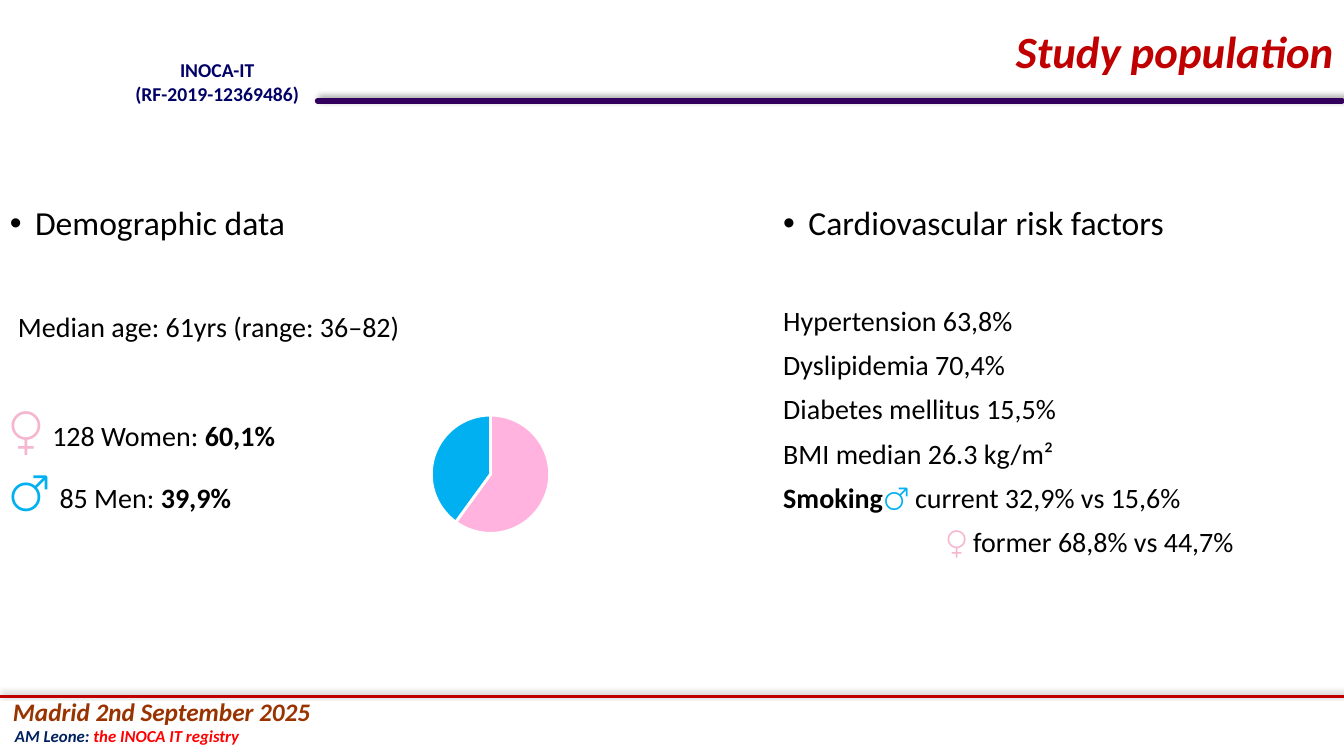
"""Build the study population slide with demographics, sex split and risk factors."""
from dataclasses import dataclass
from typing import Optional

from lxml.etree import SubElement
from pptx import Presentation
from pptx.chart.data import CategoryChartData
from pptx.dml.color import RGBColor
from pptx.enum.chart import XL_CHART_TYPE as ChartType
from pptx.enum.shapes import MSO_CONNECTOR as Connector
from pptx.enum.text import MSO_ANCHOR as Anchor, MSO_AUTO_SIZE as AutoSize, PP_ALIGN as Align
from pptx.oxml import parse_xml
from pptx.oxml.ns import nsdecls, qn
from pptx.util import Inches, Pt

FONT = "Calibri"
COLORS = {
    "black": "000000", "white": "FFFFFF", "red": "C00000", "bright_red": "FF0000",
    "brown": "993300", "navy": "002060", "indigo": "000066", "violet": "32005C",
    "rose": "F5B7D0", "pink": "FFB3DE", "blue": "00B0F0",
}


@dataclass(frozen=True)
class Run:
    """A piece of text with one format."""
    text: str
    size: float = 20
    color: str = "black"
    bold: bool = False
    italic: bool = False


@dataclass(frozen=True)
class Line:
    """A paragraph with its spacing, indent and bullet."""
    runs: tuple[Run, ...]
    before: float = 10
    spacing: float = 0.9
    align: Align = Align.LEFT
    indent: float = 0
    bullet: bool = False
    tab: Optional[float] = None


@dataclass(frozen=True)
class Block:
    """A text box with its place and paragraphs."""
    left: float
    top: float
    width: float
    height: float
    lines: tuple[Line, ...]


@dataclass(frozen=True)
class Rule:
    """A horizontal line with a shadow."""
    left: float
    top: float
    right: float
    color: str
    weight: float


def heading(text: str) -> Line:
    """Return a bulleted column heading."""
    return Line((Run(text, 24),), before=0, indent=0.25, bullet=True)


def sex_share(symbol: str, color: str, label: str, share: str) -> tuple[Run, ...]:
    """Return the runs of one sex with its share in bold."""
    return Run(f"{symbol} ", 32, color, True), Run(f"{label}: "), Run(share, bold=True)


def smoking(symbol: str, color: str, text: str) -> tuple[Run, ...]:
    """Return the runs of one smoking comparison."""
    return Run(f"{symbol} ", color=color, bold=True), Run(text)


BLOCKS = (
    Block(0.03, 6.86, 11.91, 0.4, (
        Line((Run("Madrid 2nd September 2025", 18, "brown", True, True),), 0, 1),)),
    Block(0.05, 7.15, 11.91, 0.3, (
        Line((Run("AM Leone:", 12, "navy", True, True),
              Run(" the INOCA IT registry", 12, "bright_red", True, True)), 0, 1),)),
    Block(0.96, 0.53, 2.39, 0.81, tuple(
        Line((Run(text, 14, "indigo", True),), 0, 1, Align.CENTER)
        for text in ("INOCA-IT", "(RF-2019-12369486)"))),
    Block(0, 2, 5.67, 4.76, (
        heading("Demographic data"),
        Line((Run("Median age: 61yrs (range: 36–82)"),), before=50, indent=0.08),
        Line(sex_share("♀️", "rose", "128 Women", "60,1%"), before=46),
        Line(sex_share("♂", "blue", "85 Men", "39,9%")))),
    Block(7.67, 2, 5.67, 4.76, (
        heading("Cardiovascular risk factors"),
        Line((Run("Hypertension 63,8%"),), before=46),
        *(Line((Run(text),)) for text in (
            "Dyslipidemia 70,4%", "Diabetes mellitus 15,5%", "BMI median 26.3 kg/m²")),
        Line((Run("Smoking\t", bold=True),
              *smoking("♂", "blue", "current 32,9% vs 15,6%")), tab=1.56),
        Line(smoking("♀️", "rose", "former 68,8% vs 44,7%"), indent=1.62))),
)
RULES = (Rule(3.15, 1, 13.31, "violet", 4), Rule(0, 6.91, 13.33, "red", 2))
TITLE = Line((Run("Study population", 32, "red", True, True),), 0, align=Align.RIGHT)


def rgb(name: str) -> RGBColor:
    """Return a named colour."""
    return RGBColor.from_string(COLORS[name])


def set_all(target, values: dict) -> None:
    """Set attributes from a dict of format values."""
    for name, value in values.items():
        setattr(target, name, value)


def write_lines(frame, lines: tuple[Line, ...]) -> None:
    """Write paragraphs into a text frame."""
    set_all(frame, {"word_wrap": True, "auto_size": AutoSize.NONE})
    for index, line in enumerate(lines):
        paragraph = frame.add_paragraph() if index else frame.paragraphs[0]
        properties = paragraph._p.get_or_add_pPr()
        properties.set("marL", str(Inches(line.indent)))
        properties.set("indent", str(Inches(-line.indent if line.bullet else 0)))
        if line.bullet:
            SubElement(properties, qn("a:buFont"), typeface="Arial")
            SubElement(properties, qn("a:buChar"), char="•")
        if line.tab is not None:
            tabs = SubElement(properties, qn("a:tabLst"))
            SubElement(tabs, qn("a:tab"), pos=str(Inches(line.tab)), algn="l")
        set_all(paragraph, {"alignment": line.align, "line_spacing": line.spacing,
                            "space_before": Pt(line.before)})
        for part in line.runs:
            run = paragraph.add_run()
            run.text = part.text
            set_all(run.font, {"name": FONT, "size": Pt(part.size),
                               "bold": part.bold, "italic": part.italic})
            run.font.color.rgb = rgb(part.color)


def add_block(slide, block: Block) -> None:
    """Add a text box."""
    shape = slide.shapes.add_textbox(*map(Inches, (
        block.left, block.top, block.width, block.height)))
    write_lines(shape.text_frame, block.lines)


def add_rule(slide, rule: Rule) -> None:
    """Add a horizontal line with a soft shadow."""
    connector = slide.shapes.add_connector(Connector.STRAIGHT, *map(Inches, (
        rule.left, rule.top, rule.right, rule.top)))
    connector.line.width = Pt(rule.weight)
    connector.line.color.rgb = rgb(rule.color)
    connector.line._ln.set("cap", "rnd")
    connector._element.spPr.append(parse_xml(
        f'<a:effectLst {nsdecls("a")}><a:outerShdw blurRad="{Pt(4)}" dist="{Pt(3)}" '
        f'dir="{315 * 60000}"><a:srgbClr val="{COLORS["black"]}"><a:alpha val="40000"/>'
        '</a:srgbClr></a:outerShdw></a:effectLst>'))


def add_sex_chart(slide) -> None:
    """Add the pie of women and men."""
    data = CategoryChartData()
    data.categories = ["1", "2"]
    data.add_series("Series 1", (60, 40))
    chart = slide.shapes.add_chart(
        ChartType.PIE, *map(Inches, (3.75, 3.98, 2.23, 1.45)), data).chart
    set_all(chart, {"has_legend": False, "has_title": False})
    set_all(chart.font, {"name": FONT, "size": Pt(10)})
    chart.font.color.rgb = rgb("black")
    plot = chart.plots[0]
    plot.vary_by_categories = True
    for index, color in enumerate(("pink", "blue")):
        style = plot.series[0].points[index].format
        style.fill.solid()
        style.fill.fore_color.rgb = rgb(color)
        style.line.color.rgb = rgb("white")
        style.line.width = Pt(2)


def main() -> None:
    """Build and save the slide."""
    presentation = Presentation()
    set_all(presentation, {"slide_width": Inches(13.33), "slide_height": Inches(7.5)})
    slide = presentation.slides.add_slide(presentation.slide_layouts[5])
    title = slide.shapes.title
    set_all(title, {"left": Inches(1.83), "top": Inches(0.2),
                    "width": Inches(11.5), "height": Inches(0.67)})
    title.text_frame.vertical_anchor = Anchor.MIDDLE
    write_lines(title.text_frame, (TITLE,))
    for rule in RULES:
        add_rule(slide, rule)
    for block in BLOCKS:
        add_block(slide, block)
    add_sex_chart(slide)
    presentation.save("out.pptx")


if __name__ == "__main__":
    main()
